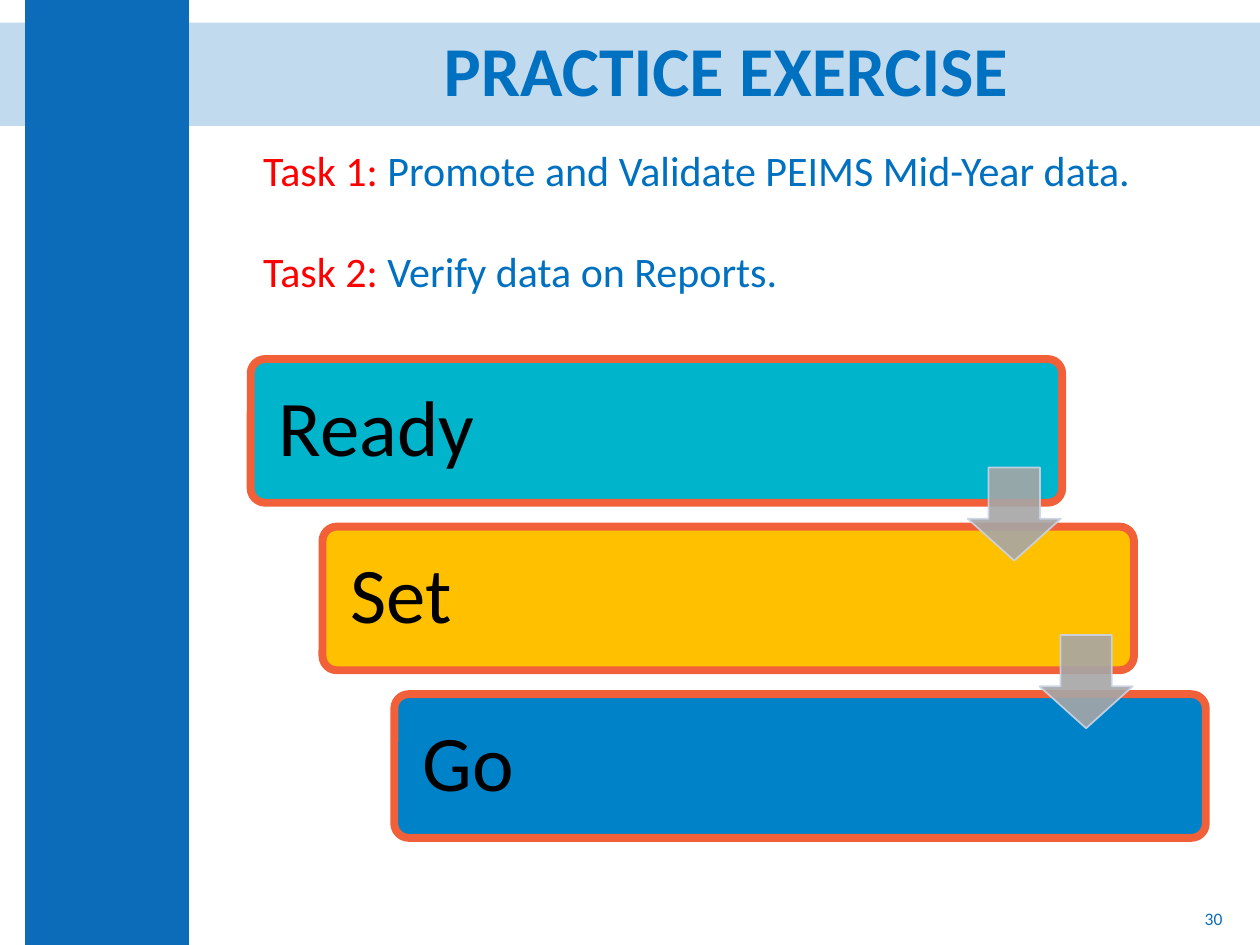
"""Build the practice exercise slide with its two tasks and three stepped boxes."""
from lxml import etree
from pptx import Presentation, util as u
from pptx.dml import color
from pptx.enum import shapes, text
from pptx.oxml import ns

deck = Presentation()
deck.slide_width, deck.slide_height = u.Inches(10), u.Inches(7.5)
COLUMN, ROW = deck.slide_width / 100, deck.slide_height / 75
page = deck.slides.add_slide(deck.slide_layouts[5])
Shape, Align = shapes.MSO_SHAPE, text.PP_ALIGN


def grid(left, top, width, height):
    return [round(n * unit) for n, unit in zip((left, top, width, height), (COLUMN, ROW) * 2)]


def paint(target, colour, opacity=100):
    if hasattr(target, "solid"):
        target.solid()
        target = target.fore_color
    target.rgb = color.RGBColor.from_string(colour)
    if opacity < 100:
        for node in target._xFill.iter(ns.qn("a:srgbClr")):
            etree.SubElement(node, ns.qn("a:alpha"), val=str(opacity * 1000))


for place, opacity in (((0, 1.8, 100, 8.2), 25), ((2, 0, 13, 75), 100)):
    band = page.shapes.add_shape(Shape.RECTANGLE, *grid(*place))
    band.shadow.inherit = False
    band.line.fill.background()
    paint(band.fill, "0D6CB9", opacity)

title = page.shapes.title
band.element.addnext(title.element)
title.left, title.top, title.width, title.height = grid(18.1, 1.8, 79, 8.2)

number = page.shapes.add_textbox(*grid(75.5, 71, 22.5, 4))
for box, wording, align, colour, font in (
    (title, "PRACTICE EXERCISE", Align.CENTER, "0070C0", {"size": u.Pt(40), "bold": True}),
    (number, "30", Align.RIGHT, "0D6CB9", {"size": u.Pt(10)}),
):
    frame = {"text": wording, "word_wrap": True, "vertical_anchor": text.MSO_ANCHOR.MIDDLE,
             "auto_size": text.MSO_AUTO_SIZE.NONE}
    for name, value in frame.items():
        setattr(box.text_frame, name, value)
    para = box.text_frame.paragraphs[0]
    para.alignment, para.line_spacing = align, 0.9
    for name, value in {"name": "Calibri", **font}.items():
        setattr(para.font, name, value)
    paint(para.font.color, colour)

STEPS = (("Ready", "00B4CB"), ("Set", "FFC000"), ("Go", "0082C8"))
LEFT, TOP, SHIFT, PITCH = 19.9, 28.5, 5.7, 13.3

for index, (wording, colour) in enumerate(STEPS):
    box = page.shapes.add_shape(
        Shape.ROUNDED_RECTANGLE, *grid(LEFT + index * SHIFT, TOP + index * PITCH, 64.4, 11.4))
    box.adjustments[0] = 0.1
    box.shadow.inherit = False
    paint(box.fill, colour)
    paint(box.line.fill, "F16038")
    box.line.width = u.Pt(4.5)
    frame = {"text": wording, "word_wrap": True, "vertical_anchor": text.MSO_ANCHOR.MIDDLE}
    for side in ("left", "top", "right", "bottom"):
        frame["margin_" + side] = u.Inches(0.19)
    for name, value in frame.items():
        setattr(box.text_frame, name, value)
    para = box.text_frame.paragraphs[0]
    para.alignment, para.line_spacing = Align.LEFT, 0.9
    para.font.name, para.font.size = "Calibri", u.Pt(45)
    paint(para.font.color, "000000")

for index in range(len(STEPS) - 1):
    arrow = page.shapes.add_shape(
        Shape.DOWN_ARROW, *grid(76.8 + index * SHIFT, 37.1 + index * PITCH, 7.4, 7.4))
    arrow.adjustments[0], arrow.adjustments[1] = 0.55, 0.45
    arrow.shadow.inherit = False
    paint(arrow.fill, "A6A6A6", 90)
    paint(arrow.line.fill, "CCD4E6", 90)
    arrow.line.width = u.Pt(1)

tasks = page.shapes.add_textbox(*grid(19.9, 11, 71.9, 14.1))
tasks.text_frame.word_wrap = True
para = tasks.text_frame.paragraphs[0]
for index, (label, wording) in enumerate((
    ("Task 1:", " Promote and Validate PEIMS Mid-Year data."),
    ("Task 2:", " Verify data on Reports."),
)):
    if index:
        para = tasks.text_frame.add_paragraph()
        para.space_before = u.Pt(29)
    for part, colour in ((label, "FF0000"), (wording, "0070C0")):
        span = para.add_run()
        span.text = part
        span.font.name, span.font.size = "Calibri", u.Pt(24)
        paint(span.font.color, colour)

deck.save("out.pptx")
